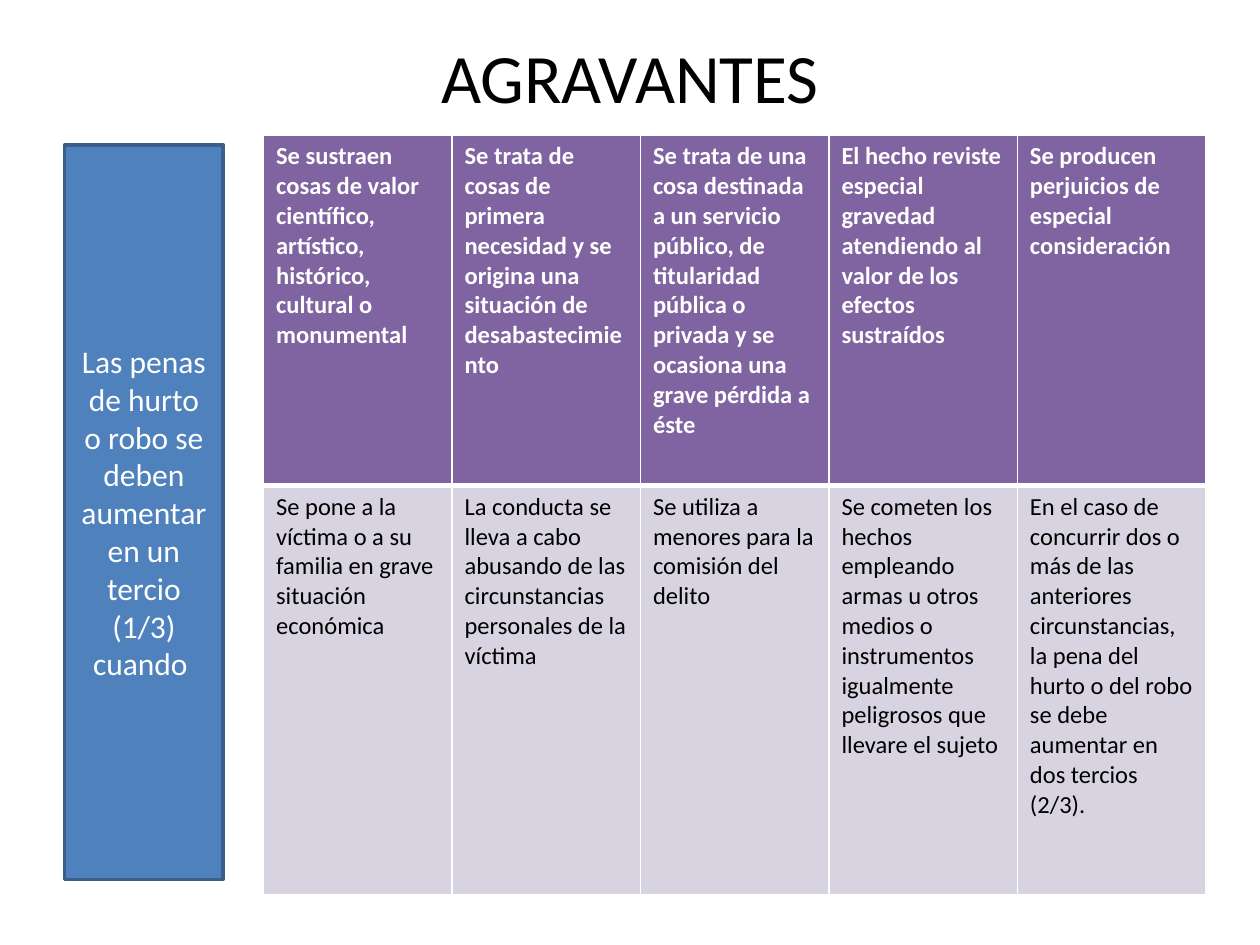
from lxml import etree
from pptx import Presentation
from pptx.dml.color import RGBColor
from pptx.enum.shapes import MSO_SHAPE
from pptx.enum.text import MSO_ANCHOR, PP_ALIGN
from pptx.oxml.ns import qn
from pptx.util import Pt

RECTANGLE = MSO_SHAPE.RECTANGLE
MIDDLE = MSO_ANCHOR.MIDDLE
CENTER = PP_ALIGN.CENTER
BLANK_LAYOUT = 6

CIRCUMSTANCES = [
    [
        "Se sustraen cosas de valor científico, artístico, histórico, cultural o monumental",
        "Se trata de cosas de primera necesidad y se origina una situación de desabastecimiento",
        "Se trata de una cosa destinada a un servicio público, de titularidad pública o privada "
        "y se ocasiona una grave pérdida a éste",
        "El hecho reviste especial gravedad atendiendo al valor de los efectos sustraídos",
        "Se producen perjuicios de especial consideración",
    ],
    [
        "Se pone a la víctima o a su familia en grave situación económica",
        "La conducta se lleva a cabo abusando de las circunstancias personales de la víctima",
        "Se utiliza a menores para la comisión del delito",
        "Se cometen los hechos empleando armas u otros medios o instrumentos igualmente "
        "peligrosos que llevare el sujeto",
        "En el caso de concurrir dos o más de las anteriores circunstancias, la pena del hurto "
        "o del robo se debe aumentar en dos tercios (2/3).",
    ],
]
ROW_STYLES = [
    {"height": 200.2, "fill": "8064A2", "color": "FFFFFF", "bold": True, "top": 1, "bottom": 3},
    {"height": 233.9, "fill": "D8D3E0", "color": "000000", "bold": False, "top": 3, "bottom": 1},
]


def rgb(value):
    return RGBColor.from_string(value)


def write(frame, text, size, color, bold=False, align=None):
    frame.word_wrap = True
    para = frame.paragraphs[0]
    para.text = text
    para.alignment = align
    for span in para.runs:
        span.font.name = "Calibri"
        span.font.size = Pt(size)
        span.font.bold = bold
        span.font.color.rgb = rgb(color)


deck = Presentation()
deck.slide_width = Pt(720)
deck.slide_height = Pt(540)
page = deck.slides.add_slide(deck.slide_layouts[BLANK_LAYOUT])

title = page.shapes.add_textbox(Pt(36), Pt(21.6), Pt(648), Pt(44))
title.text_frame.vertical_anchor = MIDDLE
write(title.text_frame, "AGRAVANTES", 39.6, "000000", align=CENTER)

table = page.shapes.add_table(2, 5, Pt(150.6), Pt(77.3), Pt(538.5), Pt(434.1)).table
for column in table.columns:
    column.width = Pt(107.7)

for row, style, texts in zip(table.rows, ROW_STYLES, CIRCUMSTANCES):
    row.height = Pt(style["height"])
    borders = {"lnL": 1, "lnR": 1, "lnT": style["top"], "lnB": style["bottom"]}
    for cell, text in zip(row.cells, texts):
        write(cell.text_frame, text, 14, style["color"], style["bold"])
        properties = cell._tc.get_or_add_tcPr()
        for side, width in borders.items():
            border = etree.SubElement(properties, qn("a:" + side), w=str(Pt(width)))
            border_fill = etree.SubElement(border, qn("a:solidFill"))
            etree.SubElement(border_fill, qn("a:srgbClr"), val="FFFFFF")
        cell.fill.solid()
        cell.fill.fore_color.rgb = rgb(style["fill"])

penalty = page.shapes.add_shape(RECTANGLE, Pt(36.9), Pt(82.8), Pt(90.7), Pt(419.8))
penalty.shadow.inherit = False
penalty.fill.solid()
penalty.fill.fore_color.rgb = rgb("4F81BD")
penalty.line.color.rgb = rgb("3A5F8C")
penalty.line.width = Pt(2)
penalty.text_frame.vertical_anchor = MIDDLE
write(
    penalty.text_frame,
    "Las penas de hurto o robo se deben aumentar en un tercio (1/3) cuando ",
    18,
    "FFFFFF",
    align=CENTER,
)

deck.save("out.pptx")
